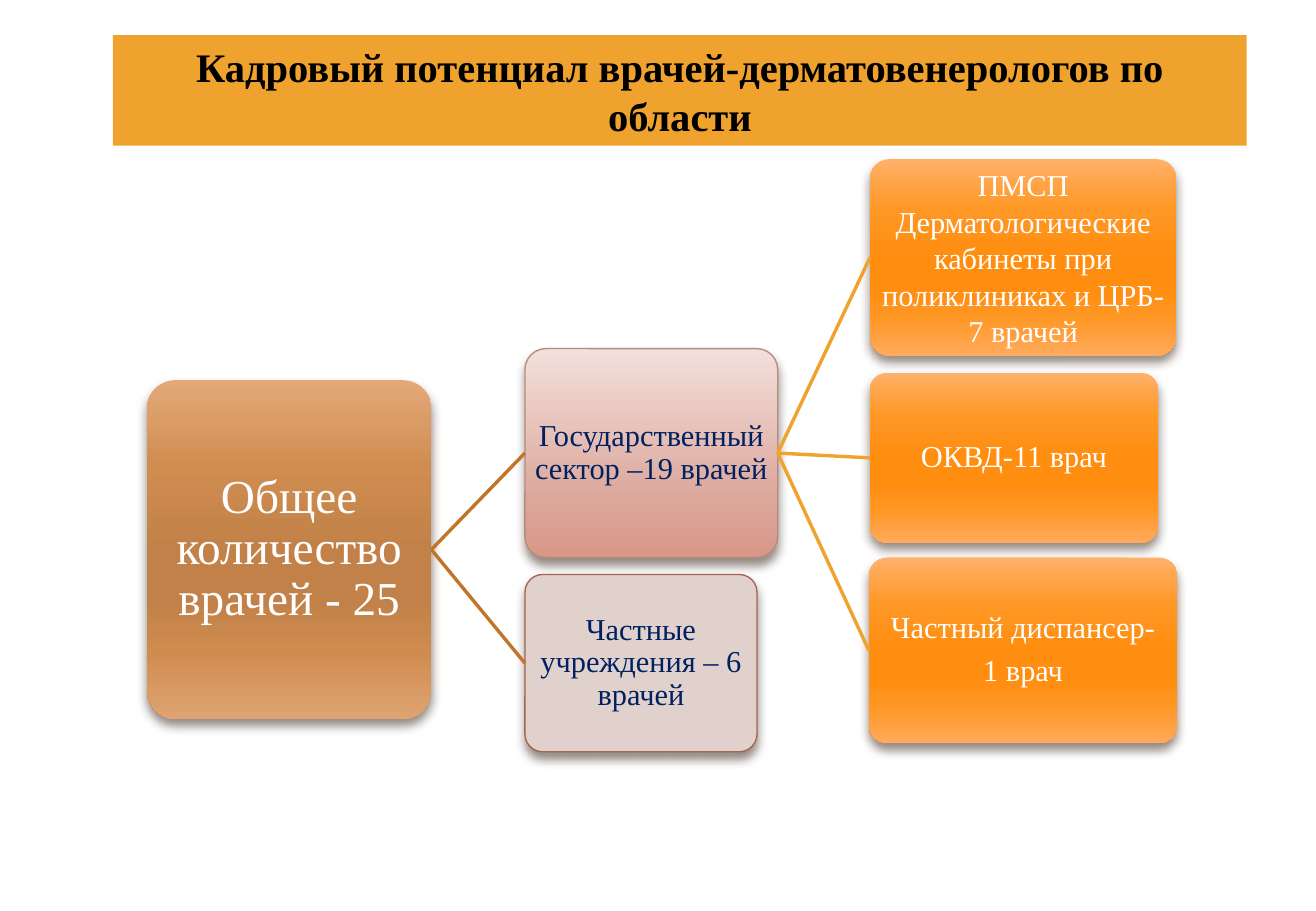
import pptx
import pptx.util
import pptx.dml.color
import pptx.enum.shapes
import pptx.enum.text
import pptx.oxml.ns
import lxml.etree
from dataclasses import dataclass

Inches, Pt = pptx.util.Inches, pptx.util.Pt
RGB = pptx.dml.color.RGBColor.from_string
SHAPES = pptx.enum.shapes.MSO_SHAPE
qn = pptx.oxml.ns.qn


@dataclass(frozen=True)
class Theme:
    font: str = "Times New Roman"
    title_size: int = 24
    total_size: int = 28
    body_size: int = 18
    title_text: str = "000000"
    light_text: str = "FFFFFF"
    dark_text: str = "002060"
    banner: str = "F0A22E"
    sector_link: str = "C17529"
    unit_link: str = "F0A22E"
    shadow: str = "4E3B30"
    link_width: float = 2
    outline_width: float = 0.79
    line_spacing: float = 0.9
    space_after: float = 0.35


theme = Theme()

brown = [(0, "E4A97A"), (25, "D08D50"), (50, "C18148"), (65, "C18148"), (80, "CF8C4F"), (100, "DEA372")]
orange = [(0, "FFB16A"), (25, "FF9826"), (50, "FF8D0F"), (65, "FF8D0F"), (80, "FF9724"), (100, "FFAA5C")]
rose = [(0, "F3E0DB"), (72, "DCA79B"), (100, "D89787")]

styles = {
    "total": dict(fill=brown, outline=None, text=theme.light_text, size=theme.total_size, inset=0.02),
    "public": dict(fill=rose, outline="B58B80", text=theme.dark_text, size=theme.body_size, inset=0.01),
    "private": dict(fill="E1D1CC", outline="A5644E", text=theme.dark_text, size=theme.body_size, inset=0.01),
    "unit": dict(fill=orange, outline=None, text=theme.light_text, size=theme.body_size, inset=0.01),
}

title = "Кадровый потенциал врачей-дерматовенерологов по области"
title_box = (0.93, 0.29, 9.33, 0.91)

nodes = {
    "total": ("total", (1.21, 3.13, 2.34, 2.79), ["Общее количество врачей - 25"]),
    "public": ("public", (4.32, 2.87, 2.08, 1.72), ["Государственный сектор –19 врачей"]),
    "private": ("private", (4.32, 4.73, 1.91, 1.46), ["Частные учреждения – 6 врачей"]),
    "clinics": ("unit", (7.16, 1.31, 2.52, 1.62),
                ["ПМСП", "Дерматологические кабинеты при поликлиниках и ЦРБ- 7 врачей"]),
    "regional": ("unit", (7.16, 3.07, 2.37, 1.4), ["ОКВД-11 врач"]),
    "company": ("unit", (7.15, 4.59, 2.54, 1.53), ["Частный диспансер-", "1 врач"]),
}
single_spaced = {"clinics"}

branches = [
    ("total", ["public", "private"], theme.sector_link),
    ("public", ["clinics", "regional", "company"], theme.unit_link),
]


def paint(shape, fill):
    if isinstance(fill, str):
        shape.fill.solid()
        shape.fill.fore_color.rgb = RGB(fill)
        return
    shape.fill.gradient()
    shape.fill.gradient_angle = 270
    stops = shape.element.spPr.find(qn("a:gradFill")).find(qn("a:gsLst"))
    for stop in list(stops):
        stops.remove(stop)
    for percent, color in fill:
        stop = lxml.etree.SubElement(stops, qn("a:gs"), pos=str(percent * 1000))
        lxml.etree.SubElement(stop, qn("a:srgbClr"), val=color)


def cast_shadow(shape):
    effects = shape.element.spPr.find(qn("a:effectLst"))
    outer = lxml.etree.SubElement(effects, qn("a:outerShdw"), blurRad=str(Pt(6)), dist=str(Pt(4)),
                                  dir="5400000", rotWithShape="0")
    color = lxml.etree.SubElement(outer, qn("a:srgbClr"), val=theme.shadow)
    lxml.etree.SubElement(color, qn("a:alpha"), val="60000")


def add_box(slide, kind, box, fill, outline=None):
    shape = slide.shapes.add_shape(kind, *map(Inches, box))
    shape.shadow.inherit = False
    paint(shape, fill)
    if outline:
        shape.line.color.rgb = RGB(outline)
        shape.line.width = Pt(theme.outline_width)
    else:
        shape.line.fill.background()
    return shape


def write(shape, lines, size, color, bold=False, spaced=False):
    frame = shape.text_frame
    frame.word_wrap = True
    frame.vertical_anchor = pptx.enum.text.MSO_ANCHOR.MIDDLE
    frame.text = "\n".join(lines)
    for paragraph in frame.paragraphs:
        paragraph.alignment = pptx.enum.text.PP_ALIGN.CENTER
        paragraph.font.name = theme.font
        paragraph.font.size = Pt(size)
        paragraph.font.bold = bold
        paragraph.font.color.rgb = RGB(color)
        if spaced:
            paragraph.line_spacing = theme.line_spacing
            paragraph.space_after = Pt(size * theme.space_after)


def add_node(slide, name):
    style_name, box, lines = nodes[name]
    style = styles[style_name]
    node = add_box(slide, SHAPES.ROUNDED_RECTANGLE, box, style["fill"], style["outline"])
    node.adjustments[0] = 0.1
    cast_shadow(node)
    write(node, lines, style["size"], style["text"], spaced=name not in single_spaced)
    frame = node.text_frame
    frame.margin_left = frame.margin_right = Inches(style["inset"])
    frame.margin_top = frame.margin_bottom = Inches(style["inset"])
    return node


def add_link(slide, parent, child, color):
    link = slide.shapes.add_connector(pptx.enum.shapes.MSO_CONNECTOR.STRAIGHT, 0, 0, 0, 0)
    link.begin_connect(parent, 3)
    link.end_connect(child, 1)
    link.line.color.rgb = RGB(color)
    link.line.width = Pt(theme.link_width)
    lxml.etree.SubElement(link.element.spPr, qn("a:effectLst"))


def main():
    deck = pptx.Presentation()
    deck.slide_width, deck.slide_height = Inches(10.83), Inches(7.5)
    slide = deck.slides.add_slide(deck.slide_layouts[6])
    placed = {name: add_node(slide, name) for name in nodes}
    for parent, children, color in branches:
        for child in children:
            add_link(slide, placed[parent], placed[child], color)
    banner = add_box(slide, SHAPES.RECTANGLE, title_box, theme.banner)
    write(banner, [title], theme.title_size, theme.title_text, bold=True)
    deck.save("out.pptx")


if __name__ == "__main__":
    main()
